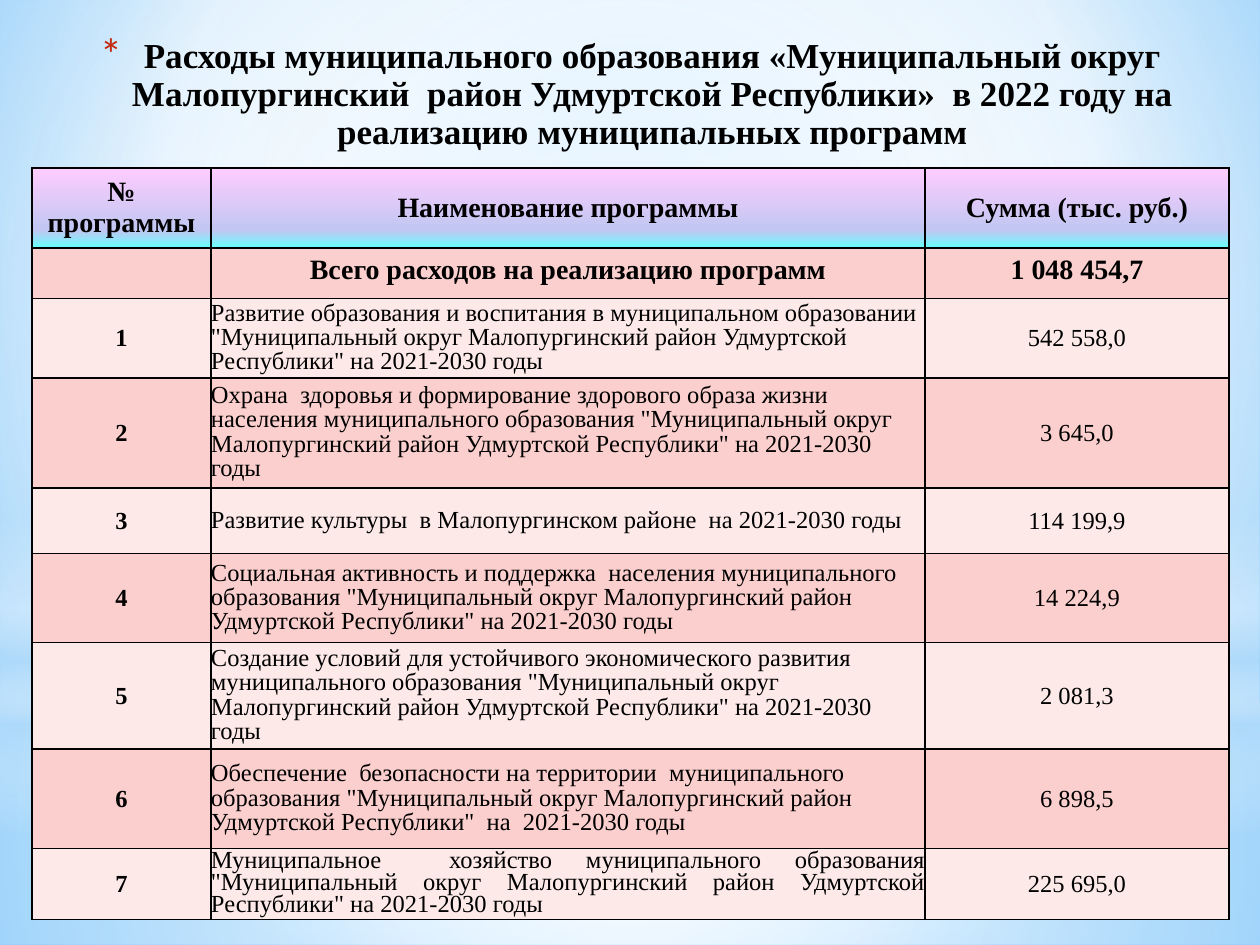
from lxml.etree import SubElement
from pptx import Presentation
from pptx.dml.color import RGBColor
from pptx.enum.shapes import MSO_SHAPE as Shape
from pptx.enum.text import MSO_ANCHOR as Anchor, PP_ALIGN as Align
from pptx.oxml.ns import qn
from pptx.util import Pt

EMU_PER_PX = 914400 / 126
FONT = "Times New Roman"
BLACK = RGBColor(0, 0, 0)
WHITE = RGBColor(0xFF, 0xFF, 0xFF)
MIST = RGBColor(0xB4, 0xDC, 0xFA)
SKY = RGBColor(0x9E, 0xD5, 0xFF)
BLUE = RGBColor(0x5B, 0xB9, 0xFF)
RED = RGBColor(0xC3, 0x26, 0x0C)
PINK = RGBColor(0xFA, 0xCF, 0xCD)
PALE_PINK = RGBColor(0xFC, 0xE9, 0xE8)
HEADER_STOPS = [
    (0, RGBColor(0xFF, 0xCC, 0xFF), 100),
    (78, RGBColor(0xC1, 0xC7, 0xF2), 100),
    (100, RGBColor(0x66, 0xFF, 0xFF), 100),
]


def px(*lengths):
    return [round(length * EMU_PER_PX) for length in lengths]


def set_gradient(fill, element, stops, center=None):
    """Stops are (position, colour, opacity); without a center the gradient runs downwards."""
    fill.gradient()
    gradient = element.find(".//" + qn("a:gradFill"))
    for child in list(gradient):
        gradient.remove(child)
    stop_list = SubElement(gradient, qn("a:gsLst"))
    for position, color, opacity in stops:
        stop = SubElement(stop_list, qn("a:gs"), pos=str(position * 1000))
        color_element = SubElement(stop, qn("a:srgbClr"), val=str(color))
        if opacity < 100:
            SubElement(color_element, qn("a:alpha"), val=str(opacity * 1000))
    if center:
        circle = SubElement(gradient, qn("a:path"), path="circle")
        sides = {side: str(value * 1000) for side, value in zip("ltrb", center)}
        SubElement(circle, qn("a:fillToRect"), **sides)
    else:
        SubElement(gradient, qn("a:lin"), ang="5400000", scaled="0")


presentation = Presentation()
presentation.slide_width, presentation.slide_height = px(1260, 945)
slide = presentation.slides.add_slide(presentation.slide_layouts[6])

# Background and its soft light layers
set_gradient(slide.background.fill, slide._element,
             [(0, SKY, 100), (60, WHITE, 100), (100, BLUE, 100)], (20, 10, 20, 60))
MIDDLE = (50, 50, 50, 50)
layers = [
    (Shape.RECTANGLE, 703, 242, [(0, WHITE, 91), (37, WHITE, 76), (100, MIST, 79)], MIDDLE),
    (Shape.RECTANGLE, 0, 703, [(0, WHITE, 89), (48, WHITE, 62), (100, MIST, 79)], MIDDLE),
    (Shape.RECTANGLE, 519, 315, [(0, WHITE, 0), (29, WHITE, 30), (45, MIST, 40),
                                 (55, WHITE, 26), (65, MIST, 60), (100, WHITE, 0)], None),
    (Shape.OVAL, 221, 703, [(0, WHITE, 100), (56, WHITE, 0)], MIDDLE),
]
for kind, top, height, stops, center in layers:
    shape = slide.shapes.add_shape(kind, *px(0, top, 1260, height))
    shape.shadow.inherit = False
    shape.line.fill.background()
    set_gradient(shape.fill, shape._element, stops, center)

# Title with an asterisk bullet
title = slide.shapes.add_textbox(*px(32, 32, 1197, 95))
title.text_frame.word_wrap = True
paragraph = title.text_frame.paragraphs[0]
paragraph.alignment = Align.CENTER
paragraph.line_spacing = 0.9
indent = px(44)[0]
properties = paragraph._p.get_or_add_pPr()
properties.set("marL", str(indent))
properties.set("indent", str(-indent))
bullet_color = SubElement(properties, qn("a:buClr"))
SubElement(bullet_color, qn("a:srgbClr"), val=str(RED))
SubElement(properties, qn("a:buSzPct"), val="128000")
SubElement(properties, qn("a:buFont"), typeface="+mj-lt")
SubElement(properties, qn("a:buChar"), char="*")
run = paragraph.add_run()
run.text = ("Расходы муниципального образования «Муниципальный округ Малопургинский  район "
            "Удмуртской Республики»  в 2022 году на реализацию муниципальных программ")
run.font.name = FONT
run.font.size = Pt(20)
run.font.bold = True
run.font.color.rgb = BLACK

# Table of programmes
DISTRICT = '"Муниципальный округ Малопургинский район Удмуртской Республики"'
YEARS = "на 2021-2030 годы"
rows = [
    (75, "№\nпрограммы", "Наименование программы", "Сумма (тыс. руб.)"),
    (50, "", "Всего расходов на реализацию программ", "1 048 454,7"),
    (73, "1", f"Развитие образования и воспитания в муниципальном образовании {DISTRICT} {YEARS}",
     "542 558,0"),
    (110, "2", "Охрана  здоровья и формирование здорового образа жизни населения "
     f"муниципального образования {DISTRICT} {YEARS}", "3 645,0"),
    (66, "3", f"Развитие культуры  в Малопургинском районе  {YEARS}", "114 199,9"),
    (89, "4", "Социальная активность и поддержка  населения муниципального образования "
     f"{DISTRICT} {YEARS}", "14 224,9"),
    (97, "5", "Создание условий для устойчивого экономического развития муниципального "
     f"образования {DISTRICT} {YEARS}", "2 081,3"),
    (100, "6", "Обеспечение  безопасности на территории  муниципального образования "
     f"{DISTRICT}  на  2021-2030 годы", "6 898,5"),
    (65, "7", f"Муниципальное  хозяйство муниципального образования {DISTRICT} {YEARS}",
     "225 695,0"),
]
table = slide.shapes.add_table(len(rows), 3, *px(32, 168, 1197, 725)).table
for column, width in zip(table.columns, px(179, 714, 304)):
    column.width = width

for row_index, (height, *texts) in enumerate(rows):
    table.rows[row_index].height = px(height)[0]
    is_program = row_index > 1
    is_last = row_index == len(rows) - 1
    for column_index, text in enumerate(texts):
        cell = table.cell(row_index, column_index)
        is_name = is_program and column_index == 1

        # Fill and borders
        cell_properties = cell._tc.get_or_add_tcPr()
        if row_index == 0:
            set_gradient(cell.fill, cell_properties, HEADER_STOPS)
        else:
            cell.fill.solid()
            cell.fill.fore_color.rgb = PINK if row_index % 2 else PALE_PINK
        for position, side in enumerate(("a:lnL", "a:lnR", "a:lnT", "a:lnB")):
            border = SubElement(cell_properties, qn(side), w=str(Pt(1)))
            border_fill = SubElement(border, qn("a:solidFill"))
            SubElement(border_fill, qn("a:srgbClr"), val=str(BLACK))
            cell_properties.insert(position, border)

        # Text
        cell.vertical_anchor = Anchor.TOP if row_index == 1 else Anchor.MIDDLE
        if is_name:
            cell.margin_left = cell.margin_right = cell.margin_top = cell.margin_bottom = 0
        for line_index, line in enumerate(text.split("\n")):
            frame = cell.text_frame
            paragraph = frame.add_paragraph() if line_index else frame.paragraphs[0]
            paragraph.alignment = Align.CENTER
            if is_name:
                paragraph.alignment = Align.JUSTIFY if is_last else Align.LEFT
                paragraph.line_spacing = 0.8 if is_last else 0.9
            if not line:
                continue
            run = paragraph.add_run()
            run.text = line
            run.font.name = FONT
            run.font.size = Pt(14 if is_program else 16)
            run.font.bold = not is_program or column_index == 0
            run.font.color.rgb = BLACK

presentation.save("out.pptx")
